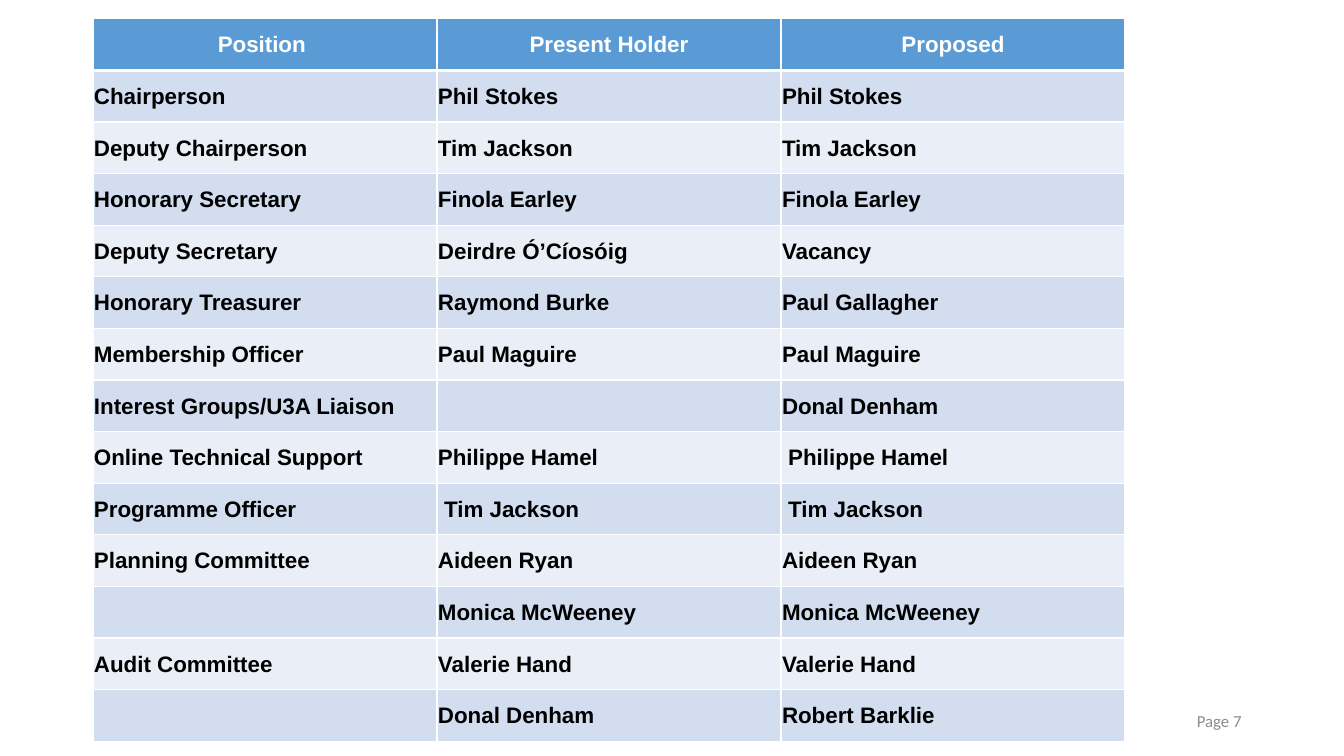
from lxml.etree import SubElement
from pptx import Presentation
from pptx.dml.color import RGBColor
from pptx.enum.text import MSO_ANCHOR, PP_ALIGN
from pptx.oxml.ns import qn
from pptx.util import Pt

HEADINGS = ("Position ", "Present Holder", "Proposed")
OFFICERS = [
    ("Chairperson", "Phil Stokes", "Phil Stokes"),
    ("Deputy Chairperson", "Tim Jackson", "Tim Jackson"),
    ("Honorary Secretary", "Finola Earley", "Finola Earley"),
    ("Deputy Secretary", "Deirdre Ó’Cíosóig", "Vacancy"),
    ("Honorary Treasurer", "Raymond Burke", "Paul Gallagher"),
    ("Membership Officer", "Paul Maguire", "Paul Maguire"),
    ("Interest Groups/U3A Liaison", "", "Donal Denham"),
    ("Online Technical Support", "Philippe Hamel", " Philippe Hamel"),
    ("Programme Officer", " Tim Jackson", " Tim Jackson"),
    ("Planning Committee", "Aideen Ryan", "Aideen Ryan"),
    ("", "Monica McWeeney", "Monica McWeeney"),
    ("Audit Committee", "Valerie Hand", "Valerie Hand"),
    ("", "Donal Denham", "Robert Barklie"),
]
PAGE_LABEL = "Page 7"

WHITE = RGBColor(0xFF, 0xFF, 0xFF)
BLACK = RGBColor(0x00, 0x00, 0x00)
GREY = RGBColor(0x8C, 0x8C, 0x8C)
HEADING_BLUE = RGBColor(0x5B, 0x9B, 0xD5)
BANDS = (RGBColor(0xD2, 0xDE, 0xEF), RGBColor(0xEA, 0xEF, 0xF7))

TABLE_LEFT, TABLE_TOP = 66.4, 13.5
COLUMN_WIDTH, ROW_HEIGHT = 245.76, 36.87


def add_run(paragraph, text, font_name, size, color, bold=False):
    run = paragraph.add_run()
    run.text = text
    font = run.font
    font.name, font.size, font.bold = font_name, Pt(size), bold
    font.color.rgb = color


def add_borders(cell, bottom_width):
    """Draw white borders; call before the fill, which must follow them in the XML."""
    properties = cell._tc.get_or_add_tcPr()
    for side, width in (("L", 1), ("R", 1), ("T", 1), ("B", bottom_width)):
        line = SubElement(properties, qn(f"a:ln{side}"), w=str(Pt(width)))
        fill = SubElement(line, qn("a:solidFill"))
        SubElement(fill, qn("a:srgbClr"), val=str(WHITE))


def fill_cell(cell, text, is_heading, background):
    add_borders(cell, 3 if is_heading else 1)
    cell.fill.solid()
    cell.fill.fore_color.rgb = background
    cell.vertical_anchor = MSO_ANCHOR.MIDDLE
    cell.margin_left = cell.margin_right = Pt(5 if is_heading else 0.75)
    cell.margin_top = Pt(0 if is_heading else 0.75)
    cell.margin_bottom = Pt(0)
    paragraph = cell.text_frame.paragraphs[0]
    paragraph.alignment = PP_ALIGN.CENTER if is_heading else PP_ALIGN.LEFT
    if text:
        add_run(paragraph, text, "Arial", 16, WHITE if is_heading else BLACK, True)


def add_officer_table(slide):
    rows = [HEADINGS, *OFFICERS]
    table = slide.shapes.add_table(
        len(rows), len(HEADINGS), Pt(TABLE_LEFT), Pt(TABLE_TOP),
        Pt(COLUMN_WIDTH * len(HEADINGS)), Pt(ROW_HEIGHT * len(rows))).table
    for column in table.columns:
        column.width = Pt(COLUMN_WIDTH)
    for r, texts in enumerate(rows):
        table.rows[r].height = Pt(ROW_HEIGHT)
        background = BANDS[(r - 1) % 2] if r else HEADING_BLUE
        for c, text in enumerate(texts):
            fill_cell(table.cell(r, c), text, r == 0, background)


def add_page_label(slide):
    frame = slide.shapes.add_textbox(Pt(678), Pt(500.5), Pt(216), Pt(28.75)).text_frame
    frame.word_wrap = True
    frame.vertical_anchor = MSO_ANCHOR.MIDDLE
    frame.paragraphs[0].alignment = PP_ALIGN.RIGHT
    add_run(frame.paragraphs[0], PAGE_LABEL, "Calibri", 12, GREY)


def main():
    deck = Presentation()
    deck.slide_width, deck.slide_height = Pt(960), Pt(540)
    slide = deck.slides.add_slide(deck.slide_layouts[6])
    add_officer_table(slide)
    add_page_label(slide)
    deck.save("out.pptx")


if __name__ == "__main__":
    main()
